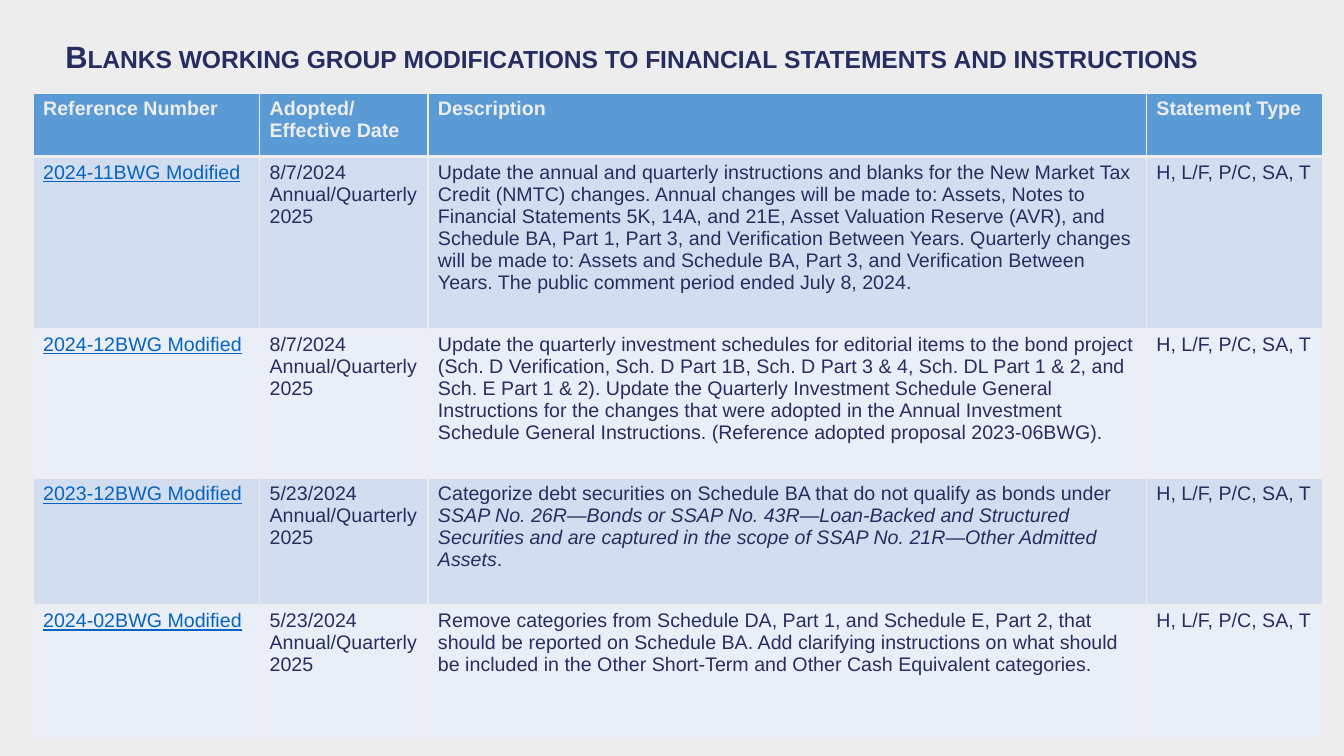
from dataclasses import dataclass

from lxml.etree import SubElement
from pptx import Presentation
from pptx.dml.color import RGBColor
from pptx.enum.text import MSO_ANCHOR
from pptx.oxml.ns import qn
from pptx.table import _Cell as Cell
from pptx.text.text import _Paragraph as Paragraph
from pptx.util import Pt

PALE = "EDEDEE"
NAVY = "262E61"
LINK_BLUE = "0563C1"
HEADER_BLUE = "5B9BD5"
BANDS = ("D2DEEF", "EAEFF7")
COLUMN_WIDTHS = (161.8, 120.3, 513.2, 125.6)
ROW_HEIGHTS = (45.4, 123.1, 106.6, 90.7, 95.8)
HEADINGS = ("Reference Number", "Adopted/\nEffective Date", "Description", "Statement Type")
EFFECTIVE = "Annual/Quarterly 2025"
STATEMENT_TYPES = "H, L/F, P/C, SA, T"


@dataclass(frozen=True)
class Span:
    text: str
    color: str = NAVY
    size: float = 14
    bold: bool = False
    italic: bool = False
    underline: bool = False
    small_caps: bool = False


@dataclass(frozen=True)
class Proposal:
    reference: str
    adopted: str
    description: tuple[Span, ...]


PROPOSALS = (
    Proposal("2024-11BWG Modified", "8/7/2024", (Span(
        "Update the annual and quarterly instructions and blanks for the New Market Tax Credit "
        "(NMTC) changes. Annual changes will be made to: Assets, Notes to Financial Statements "
        "5K, 14A, and 21E, Asset Valuation Reserve (AVR), and Schedule BA, Part 1, Part 3, and "
        "Verification Between Years. Quarterly changes will be made to: Assets and Schedule BA, "
        "Part 3, and Verification Between Years. The public comment period ended July 8, 2024."),)),
    Proposal("2024-12BWG Modified", "8/7/2024", (Span(
        "Update the quarterly investment schedules for editorial items to the bond project "
        "(Sch. D Verification, Sch. D Part 1B, Sch. D Part 3 & 4, Sch. DL Part 1 & 2, and "
        "Sch. E Part 1 & 2). Update the Quarterly Investment Schedule General Instructions for "
        "the changes that were adopted in the Annual Investment Schedule General Instructions. "
        "(Reference adopted proposal 2023-06BWG)."),)),
    Proposal("2023-12BWG Modified", "5/23/2024", (
        Span("Categorize debt securities on Schedule BA that do not qualify as bonds under "),
        Span("SSAP No. 26R—Bonds or SSAP No. 43R—Loan-Backed and Structured Securities and are "
             "captured in the scope of SSAP No. 21R—Other Admitted Assets", italic=True),
        Span("."))),
    Proposal("2024-02BWG Modified", "5/23/2024", (Span(
        "Remove categories from Schedule DA, Part 1, and Schedule E, Part 2, that should be "
        "reported on Schedule BA. Add clarifying instructions on what should be included in "
        "the Other Short-Term and Other Cash Equivalent categories."),)),
)


def rgb(color: str) -> RGBColor:
    return RGBColor.from_string(color)


def add_span(paragraph: Paragraph, span: Span) -> None:
    run = paragraph.add_run()
    run.text = span.text
    font = run.font
    font.name, font.size = "Arial", Pt(span.size)
    font.bold, font.italic, font.underline = span.bold, span.italic, span.underline
    font.color.rgb = rgb(span.color)
    if span.small_caps:
        run._r.get_or_add_rPr().set("cap", "small")


def add_border(cell: Cell, side: str, width: float) -> None:
    line = SubElement(cell._tc.get_or_add_tcPr(), qn(f"a:{side}"), w=str(Pt(width)))
    SubElement(SubElement(line, qn("a:solidFill")), qn("a:srgbClr"), val=PALE)


def fill_cell(cell: Cell, lines: list[tuple[Span, ...]], fill: str, top: float, bottom: float) -> None:
    for side, width in (("lnL", 1), ("lnR", 1), ("lnT", top), ("lnB", bottom)):
        add_border(cell, side, width)
    cell.fill.solid()
    cell.fill.fore_color.rgb = rgb(fill)
    frame = cell.text_frame
    for index, spans in enumerate(lines):
        paragraph = frame.add_paragraph() if index else frame.paragraphs[0]
        for span in spans:
            add_span(paragraph, span)


def main() -> None:
    deck = Presentation()
    deck.slide_width, deck.slide_height = Pt(960), Pt(540)
    slide = deck.slides.add_slide(deck.slide_layouts[6])
    slide.background.fill.solid()
    slide.background.fill.fore_color.rgb = rgb(PALE)

    modifications = slide.shapes.add_table(
        len(ROW_HEIGHTS), len(COLUMN_WIDTHS), Pt(23.6), Pt(66.4),
        Pt(sum(COLUMN_WIDTHS)), Pt(sum(ROW_HEIGHTS))).table
    for column, width in zip(modifications.columns, COLUMN_WIDTHS):
        column.width = Pt(width)
    for row, height in zip(modifications.rows, ROW_HEIGHTS):
        row.height = Pt(height)

    for column, heading in enumerate(HEADINGS):
        lines = [(Span(line, PALE, bold=True),) for line in heading.split("\n")]
        fill_cell(modifications.cell(0, column), lines, HEADER_BLUE, 1, 3)
    for index, proposal in enumerate(PROPOSALS):
        contents = (
            [(Span(proposal.reference, LINK_BLUE, underline=True),)],
            [(Span(proposal.adopted),), (Span(EFFECTIVE),)],
            [proposal.description],
            [(Span(STATEMENT_TYPES),)],
        )
        for column, lines in enumerate(contents):
            fill_cell(modifications.cell(index + 1, column), lines,
                      BANDS[index % 2], 1 if index else 3, 1)

    title = slide.shapes.add_textbox(Pt(39.6), Pt(26.6), Pt(859), Pt(53.3)).text_frame
    title.word_wrap = True
    title.vertical_anchor = MSO_ANCHOR.TOP
    title.paragraphs[0].line_spacing = 0.9
    add_span(title.paragraphs[0], Span(
        "Blanks working group modifications to financial statements and instructions",
        size=22, bold=True, small_caps=True))

    deck.save("out.pptx")


if __name__ == "__main__":
    main()
